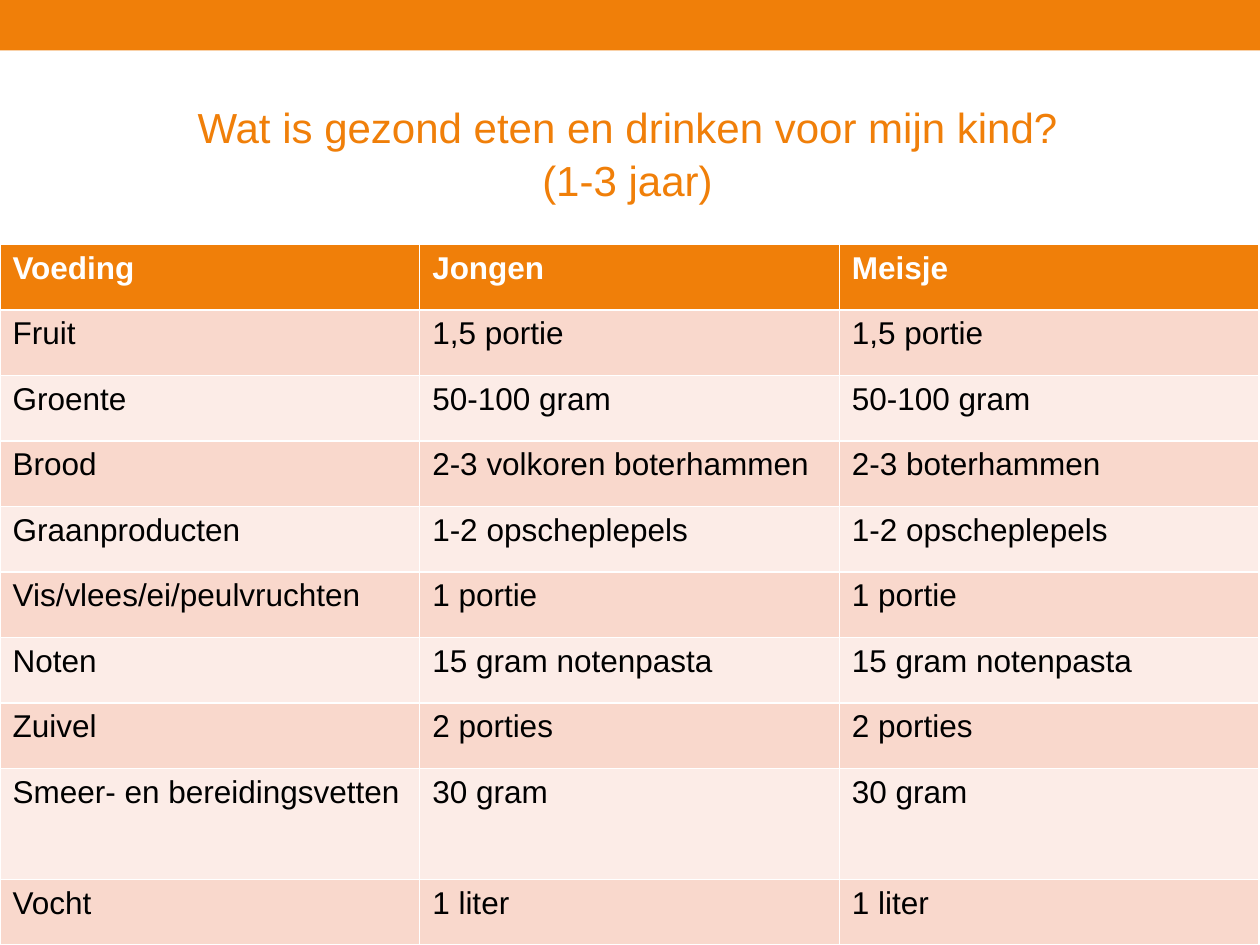
from pptx import Presentation
from pptx import util as u
from pptx.dml import color
from pptx.enum import shapes, text

COLORS = {
    "orange": "F07F09",
    "white": "FFFFFF",
    "black": "000000",
    "band_dark": "F9D8CC",
    "band_light": "FCECE7",
}
FONT = "Arial"
TITLE_LINES = ["Wat is gezond eten en drinken voor mijn kind?", "(1-3 jaar)"]
HEADER = ("Voeding", "Jongen", "Meisje")
ADVICE = [
    ("Fruit", "1,5 portie", "1,5 portie"),
    ("Groente", "50-100 gram", "50-100 gram"),
    ("Brood", "2-3 volkoren boterhammen", "2-3 boterhammen"),
    ("Graanproducten", "1-2 opscheplepels", "1-2 opscheplepels"),
    ("Vis/vlees/ei/peulvruchten", "1 portie", "1 portie"),
    ("Noten", "15 gram notenpasta", "15 gram notenpasta"),
    ("Zuivel", "2 porties", "2 porties"),
    ("Smeer- en bereidingsvetten", "30 gram", "30 gram"),
    ("Vocht", "1 liter", "1 liter"),
]
ROW_HEIGHT = u.Cm(1.32)
TALL_ROW = 8


def rgb(name):
    return color.RGBColor.from_string(COLORS[name])


def style_font(paragraph, size, color_name, bold=False):
    font = paragraph.font
    font.name = FONT
    font.size = u.Pt(size)
    font.bold = bold
    font.color.rgb = rgb(color_name)


def add_top_band(slide, left, top, width, height):
    band = slide.shapes.add_shape(shapes.MSO_SHAPE.RECTANGLE, left, top, width, height)
    band.shadow.inherit = False
    band.fill.solid()
    band.fill.fore_color.rgb = rgb("orange")
    band.line.fill.background()


def place_title(slide, left, top, width, height):
    title = slide.shapes.title
    title.left, title.top, title.width, title.height = left, top, width, height
    frame = title.text_frame
    frame.text = "\n".join(TITLE_LINES)
    frame.word_wrap = True
    frame.auto_size = text.MSO_AUTO_SIZE.NONE
    frame.vertical_anchor = text.MSO_ANCHOR.MIDDLE
    for line in frame.paragraphs:
        line.alignment = text.PP_ALIGN.CENTER
        style_font(line, 24, "orange")
    frame.paragraphs[-1].space_before = u.Pt(1.5)


def add_advice_table(slide, left, top, width, height):
    rows = [HEADER, *ADVICE]
    advice = slide.shapes.add_table(len(rows), len(HEADER), left, top, width, height).table
    for column in advice.columns:
        column.width = width // len(HEADER)
    for row in advice.rows:
        row.height = ROW_HEIGHT
    advice.rows[TALL_ROW].height = height - ROW_HEIGHT * (len(rows) - 1)

    for r, labels in enumerate(rows):
        is_header = r == 0
        band = "orange" if is_header else ("band_dark" if r % 2 else "band_light")
        for c, label in enumerate(labels):
            cell = advice.cell(r, c)
            cell.text = label
            cell.fill.solid()
            cell.fill.fore_color.rgb = rgb(band)
            style_font(cell.text_frame.paragraphs[0], 18,
                       "white" if is_header else "black", is_header)


def main():
    deck = Presentation()
    deck.slide_width, deck.slide_height = u.Cm(25.4), u.Cm(19.05)
    slide = deck.slides.add_slide(deck.slide_layouts[5])
    add_top_band(slide, 0, 0, deck.slide_width, u.Cm(1.02))
    place_title(slide, u.Cm(1.22), u.Cm(1.5), u.Cm(22.86), u.Cm(3.18))
    add_advice_table(slide, 0, u.Cm(4.93), u.Cm(25.38), u.Cm(14.12))
    deck.save("out.pptx")


if __name__ == "__main__":
    main()
